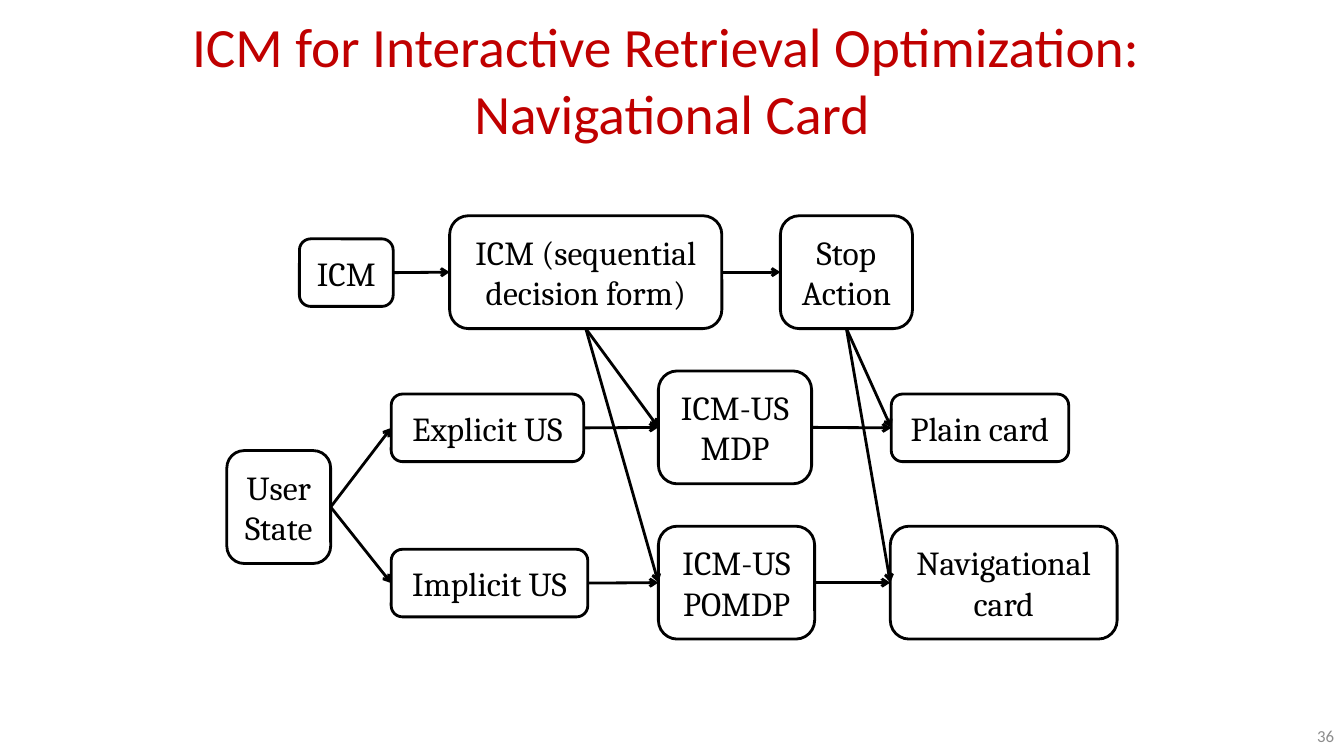
from dataclasses import dataclass

from lxml import etree
from pptx import Presentation, util as u
from pptx.dml.color import RGBColor
from pptx.enum import shapes, text
from pptx.oxml.ns import qn

PX = 9144  # EMU per px, 100 px to the inch


@dataclass(frozen=True)
class Theme:
    heading: str = "Calibri"
    body: str = "Cambria"
    red: RGBColor = RGBColor(0xC0, 0x00, 0x00)
    black: RGBColor = RGBColor(0x00, 0x00, 0x00)
    white: RGBColor = RGBColor(0xFF, 0xFF, 0xFF)
    grey: RGBColor = RGBColor(0x8C, 0x8C, 0x8C)
    title_pt: float = 39.6
    node_pt: float = 24
    number_pt: float = 12
    line_pt: float = 2


T = Theme()
TOP, BOTTOM_SIDE, LEFT, RIGHT = 0, 2, 1, 3

# Row centres, measured from the top of the diagram
ICM_ROW, EXPLICIT_ROW, USER_ROW, IMPLICIT_ROW = 56, 210, 289, 364

# Label: left, width, row centre
NODES = {
    "ICM": (72, 93, ICM_ROW),
    "ICM (sequential\ndecision form)": (221, 270, ICM_ROW),
    "Stop\nAction": (549, 131, ICM_ROW),
    "User\nState": (0, 103, USER_ROW),
    "Explicit US": (163, 191, EXPLICIT_ROW),
    "Implicit US": (163, 195, IMPLICIT_ROW),
    "ICM-US\nMDP": (428, 152, EXPLICIT_ROW),
    "ICM-US\nPOMDP": (428, 155, IMPLICIT_ROW),
    "Plain card": (659, 176, EXPLICIT_ROW),
    "Navigational\ncard": (658, 225, IMPLICIT_ROW),
}

# Source, side it leaves from, targets (always entered from the left)
ARROWS = [
    ("ICM", RIGHT, ["ICM (sequential\ndecision form)"]),
    ("ICM (sequential\ndecision form)", RIGHT, ["Stop\nAction"]),
    ("User\nState", RIGHT, ["Explicit US", "Implicit US"]),
    ("Explicit US", RIGHT, ["ICM-US\nMDP"]),
    ("Implicit US", RIGHT, ["ICM-US\nPOMDP"]),
    ("ICM-US\nMDP", RIGHT, ["Plain card"]),
    ("ICM-US\nPOMDP", RIGHT, ["Navigational\ncard"]),
    ("Stop\nAction", BOTTOM_SIDE, ["Plain card", "Navigational\ncard"]),
    ("ICM (sequential\ndecision form)", BOTTOM_SIDE,
     ["ICM-US\nMDP", "ICM-US\nPOMDP"]),
]


def emu(*lengths):
    return [u.Emu(n * PX) for n in lengths]


def write(sp, words, font, size, color, align, wrap=True):
    tf = sp.text_frame
    tf.word_wrap = wrap
    tf.vertical_anchor = text.MSO_ANCHOR.MIDDLE
    tf.text = words
    for p in tf.paragraphs:
        p.alignment = align
        p.font.name = font
        p.font.size = u.Pt(size)
        p.font.color.rgb = color


def add_title(s, box):
    sp = s.shapes.add_textbox(*emu(*box))
    write(sp, "ICM for Interactive Retrieval Optimization: \vNavigational Card",
          T.heading, T.title_pt, T.red, text.PP_ALIGN.CENTER)


def add_node(s, label, left, width, middle):
    height = 22 + 45 * len(label.split("\n"))
    sp = s.shapes.add_shape(shapes.MSO_SHAPE.ROUNDED_RECTANGLE,
                            *emu(left, middle - height // 2, width, height))
    sp.shadow.inherit = False
    sp.fill.solid()
    sp.fill.fore_color.rgb = T.white
    sp.line.color.rgb = T.black
    sp.line.width = u.Pt(T.line_pt)
    write(sp, label, T.body, T.node_pt, T.black, text.PP_ALIGN.CENTER, wrap=False)
    tf = sp.text_frame
    tf.margin_left = tf.margin_right = tf.margin_top = tf.margin_bottom = u.Inches(0.1)
    return sp


def add_arrow(s, source, side, target):
    c = s.shapes.add_connector(shapes.MSO_CONNECTOR.STRAIGHT, 0, 0, 0, 0)
    c.begin_connect(source, side)
    c.end_connect(target, LEFT)
    c.line.color.rgb = T.black
    c.line.width = u.Pt(T.line_pt)
    etree.SubElement(c.line._get_or_add_ln(), qn("a:tailEnd"), type="arrow")
    etree.SubElement(c._element.spPr, qn("a:effectLst"))


def add_diagram(s, box):
    x, y = box[:2]
    nodes = {label: add_node(s, label, x + left, width, y + middle)
             for label, (left, width, middle) in NODES.items()}
    for source, side, targets in ARROWS:
        for target in targets:
            add_arrow(s, nodes[source], side, nodes[target])


def add_slide_number(s, box):
    sp = s.shapes.add_textbox(*emu(*box))
    write(sp, "36", T.heading, T.number_pt, T.grey, text.PP_ALIGN.RIGHT)


def main():
    prs = Presentation()
    prs.slide_width, prs.slide_height = emu(1333, 750)
    s = prs.slides.add_slide(prs.slide_layouts[6])
    add_title(s, (0, 24, 1333, 108))
    add_diagram(s, (225, 214, 883, 420))
    add_slide_number(s, (1022, 710, 311, 40))
    prs.save("out.pptx")


if __name__ == "__main__":
    main()
